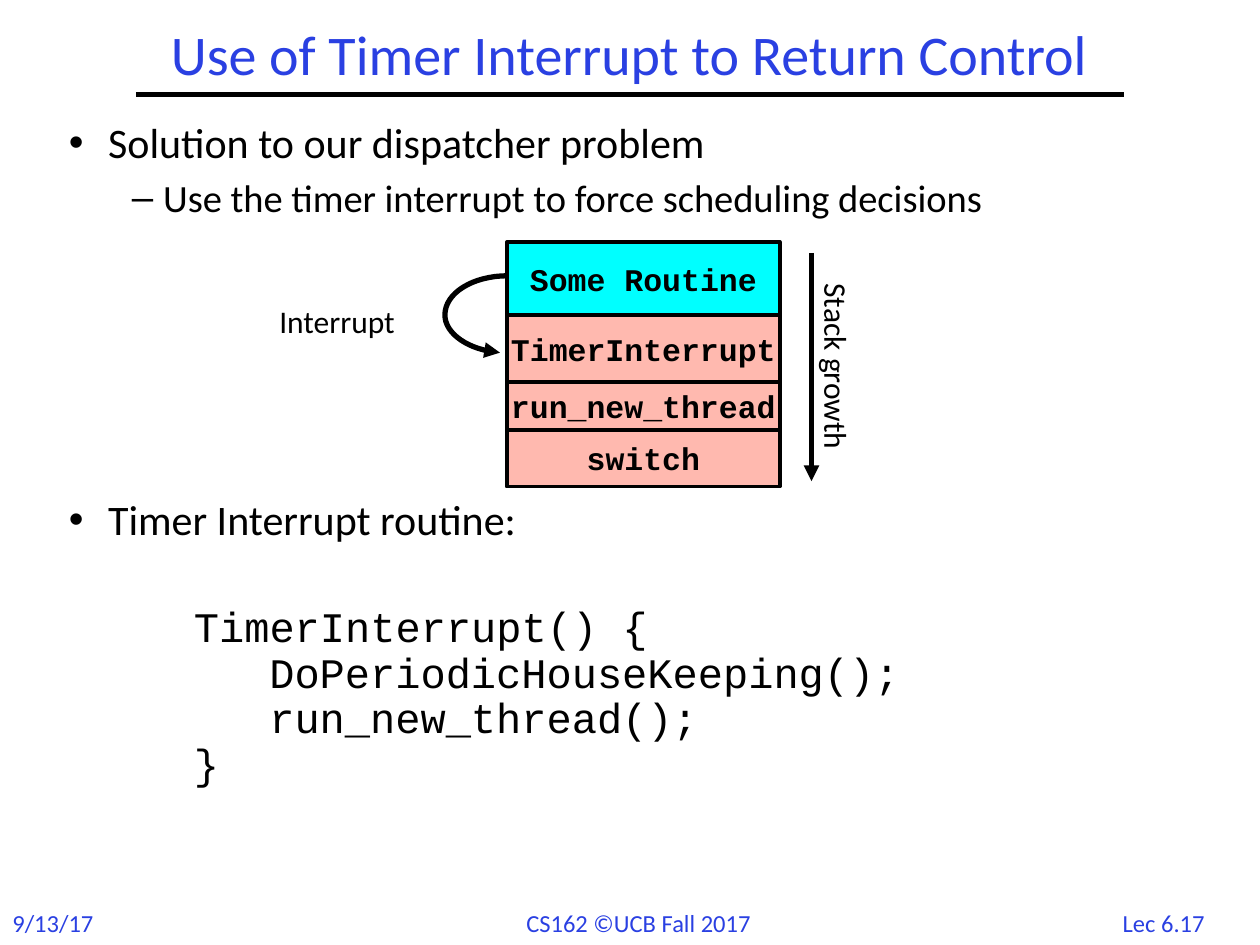
from lxml.etree import SubElement
from pptx import Presentation
from pptx.dml.color import RGBColor
from pptx.enum.shapes import MSO_CONNECTOR as Connector, MSO_SHAPE as Shape
from pptx.enum.text import MSO_ANCHOR as Anchor, PP_ALIGN as Align
from pptx.oxml.ns import qn
from pptx.util import Cm, Pt

# Content; all lengths are in centimetres
BLUE, BLACK, CYAN, PINK = "2A40E2", "000000", "00FFFF", "FFB9AF"
SANS, MONO = "Calibri", "Courier New"

TITLE = "Use of Timer Interrupt to Return Control"
FOOTERS = [  # text, left, width, alignment
    ("9/13/17", 0, 2.4, Align.LEFT),
    ("CS162 ©UCB Fall 2017", 10.36, 5.28, Align.LEFT),
    ("Lec 6.17", 22.28, 2.36, Align.CENTER),
]
BULLET_BLOCKS = [  # top, height, [(level, text)]
    (2.34, 2.3, [(0, "Solution to our dispatcher problem"),
                 (1, "Use the timer interrupt to force scheduling decisions")]),
    (9.93, 1.2, [(0, "Timer Interrupt routine:")]),
]
BULLET_STYLES = [  # mark, size, margin, hanging indent
    ("•", 24, 0.79, 0.79),
    ("–", 22, 1.9, 0.63),
]
CODE = [  # indent level, line
    (0, "TimerInterrupt() {"),
    (1, "DoPeriodicHouseKeeping();"),
    (1, "run_new_thread();"),
    (0, "}"),
]
CODE_INDENT = 1.52
STACK_LEFT, STACK_TOP, STACK_WIDTH = 10.22, 4.88, 5.5
STACK = [  # name, height, fill
    ("Some Routine", 1.48, CYAN),
    ("TimerInterrupt", 1.34, PINK),
    ("run_new_thread", 0.97, PINK),
    ("switch", 1.14, PINK),
]
LABELS = [  # text, left, top, width, rotation
    ("Interrupt", 5.36, 5.97, 2.87, 0),
    ("Stack growth", 14.91, 6.88, 3.91, 90),
]
LINES = [  # start x, start y, end x, end y, has arrowhead
    (2.74, 1.9, 22.66, 1.9, False),
    (16.36, 5.1, 16.36, 9.7, True),
]
LOOP = [  # two Bezier segments, four points each
    [(10.24, 5.56), (9.53, 5.56), (8.97, 5.91), (8.97, 6.35)],
    [(8.97, 6.35), (8.97, 6.73), (9.45, 7.06), (10.08, 7.11)],
]


def color(value):
    return RGBColor.from_string(value)


def add_run(paragraph, text, size, font=SANS, fill=BLACK, bold=False):
    run = paragraph.add_run()
    run.text = text
    run.font.size, run.font.name, run.font.bold = Pt(size), font, bold
    run.font.color.rgb = color(fill)


def add_box(left, top, width, height, align=Align.LEFT):
    box = slide.shapes.add_textbox(Cm(left), Cm(top), Cm(width), Cm(height))
    box.text_frame.word_wrap = align != Align.CENTER
    box.text_frame.paragraphs[0].alignment = align
    return box


def paragraphs(frame, count):
    for _ in range(count - 1):
        frame.add_paragraph()
    return frame.paragraphs


def style_line(shape, width, arrow=False):
    shape.line.color.rgb = color(BLACK)
    shape.line.width = Pt(width)
    if arrow:
        SubElement(shape.line._get_or_add_ln(), qn("a:tailEnd"), type="triangle")


def bezier(points, t):
    weights = ((1 - t) ** 3, 3 * t * (1 - t) ** 2, 3 * t * t * (1 - t), t ** 3)
    return tuple(Cm(sum(w * p[axis] for w, p in zip(weights, points)))
                 for axis in (0, 1))


presentation = Presentation()
presentation.slide_width, presentation.slide_height = Cm(25.4), Cm(19.05)
slide = presentation.slides.add_slide(presentation.slide_layouts[6])

# Title and footers
title = add_box(2.74, 0.43, 19.9, 1.47, Align.CENTER).text_frame
title.vertical_anchor = Anchor.MIDDLE
title.paragraphs[0].line_spacing = 0.9
add_run(title.paragraphs[0], TITLE, 32, fill=BLUE)
for text, left, width, align in FOOTERS:
    footer = add_box(left, 18.19, width, 0.86, align)
    add_run(footer.text_frame.paragraphs[0], text, 14, fill=BLUE)

# Bulleted text
for top, height, items in BULLET_BLOCKS:
    frame = add_box(1.14, top, 22.86, height).text_frame
    for paragraph, (level, text) in zip(paragraphs(frame, len(items)), items):
        mark, size, margin, hanging = BULLET_STYLES[level]
        paragraph.level = level
        paragraph.line_spacing = 0.9
        paragraph.space_before = Pt(0.3 * size if level else 0)
        properties = paragraph._p.get_or_add_pPr()
        properties.set("marL", str(Cm(margin)))
        properties.set("indent", str(-Cm(hanging)))
        SubElement(properties, qn("a:buFont"), typeface="Arial")
        SubElement(properties, qn("a:buChar"), char=mark)
        add_run(paragraph, text, size)

# Code listing
frame = add_box(3.66, 12.09, 19, 4).text_frame
for paragraph, (level, text) in zip(paragraphs(frame, len(CODE)), CODE):
    paragraph.line_spacing = Pt(26)
    paragraph._p.get_or_add_pPr().set("marL", str(Cm(level * CODE_INDENT)))
    add_run(paragraph, text, 24, MONO)

# Stack frames, one below the other
top = STACK_TOP
for name, height, fill in STACK:
    block = slide.shapes.add_shape(
        Shape.RECTANGLE, Cm(STACK_LEFT), Cm(top), Cm(STACK_WIDTH), Cm(height))
    block.shadow.inherit = False
    block.fill.solid()
    block.fill.fore_color.rgb = color(fill)
    style_line(block, 2.25)
    block.text_frame.word_wrap = False
    block.text_frame.vertical_anchor = Anchor.MIDDLE
    paragraph = block.text_frame.paragraphs[0]
    paragraph.alignment = Align.CENTER
    add_run(paragraph, name, 18, MONO, bold=True)
    top += height

# Curved interrupt arrow
STEPS = 16
curve = [bezier(segment, step / STEPS)
         for segment in LOOP for step in range(1, STEPS + 1)]
builder = slide.shapes.build_freeform(*bezier(LOOP[0], 0))
builder.add_line_segments(curve, close=False)
loop = builder.convert_to_shape()
loop.shadow.inherit = False
loop.fill.background()
style_line(loop, 3, arrow=True)

# Labels and straight lines
for text, left, top, width, rotation in LABELS:
    label = add_box(left, top, width, 1.02, Align.CENTER)
    label.rotation = rotation
    add_run(label.text_frame.paragraphs[0], text, 18)
for x1, y1, x2, y2, arrow in LINES:
    line = slide.shapes.add_connector(
        Connector.STRAIGHT, Cm(x1), Cm(y1), Cm(x2), Cm(y2))
    style_line(line, 3, arrow)
    SubElement(line._element.spPr, qn("a:effectLst"))

presentation.save("out.pptx")
